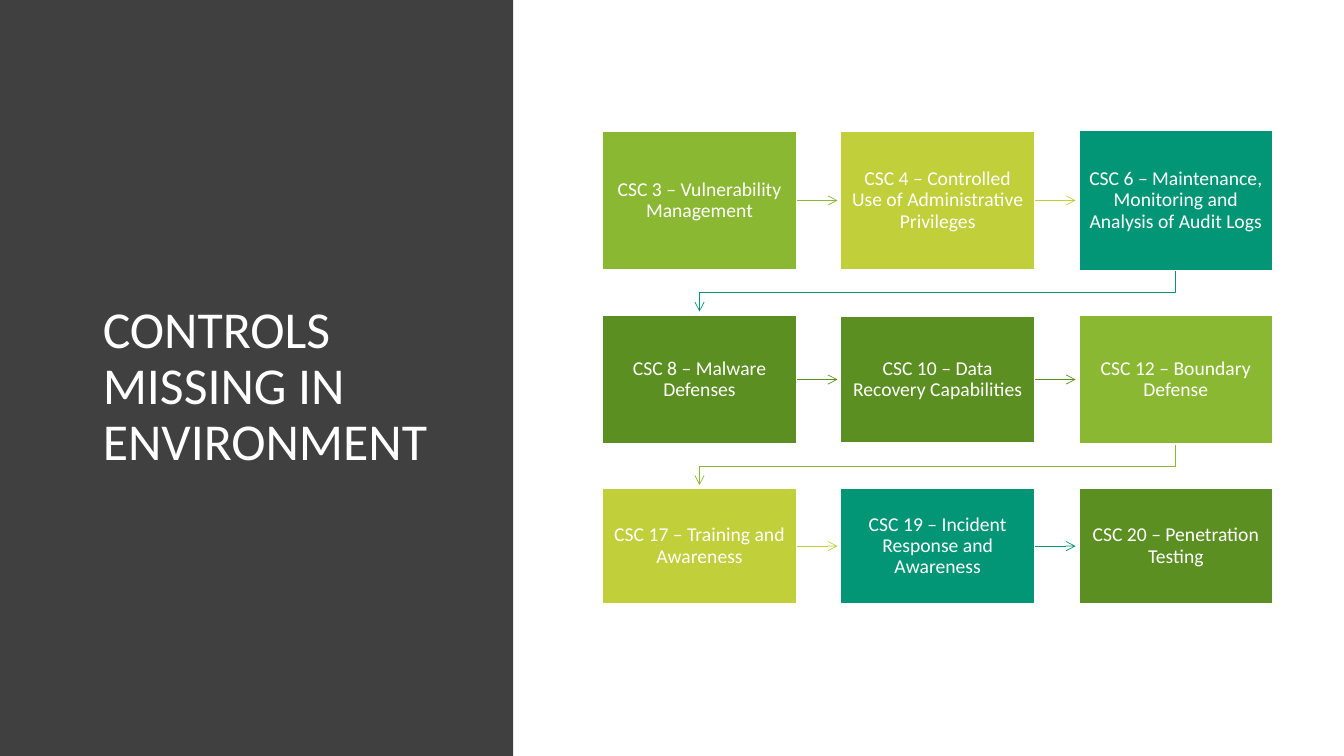
from dataclasses import dataclass

from lxml import etree
from pptx import Presentation
from pptx.dml.color import RGBColor
from pptx.enum.shapes import MSO_CONNECTOR, MSO_SHAPE
from pptx.enum.text import MSO_ANCHOR, PP_ALIGN
from pptx.oxml.ns import qn
from pptx.shapes.base import BaseShape
from pptx.slide import Slide
from pptx.util import Pt

RECT = MSO_SHAPE.RECTANGLE
STRAIGHT = MSO_CONNECTOR.STRAIGHT
MIDDLE = MSO_ANCHOR.MIDDLE
CENTER = PP_ALIGN.CENTER

FONT = "Calibri"
WHITE, DARK = "FFFFFF", "404040"
LIME, YELLOW, TEAL, GREEN = "8AB833", "C0CF3A", "029676", "5B8F22"

LEFT, STEP, WIDTH = 430.5, 170.1, 138.4
REACH = 29.3  # length of an arrow across the gap between boxes
BEND = 15.8  # drop before a row link turns left


@dataclass
class Box:
    text: str
    color: str
    height: float


@dataclass
class Row:
    mid: float
    boxes: list[Box]


ROWS = [
    Row(143.2, [
        Box("CSC 3 – Vulnerability Management", LIME, 98.6),
        Box("CSC 4 – Controlled Use of Administrative Privileges", YELLOW, 99.4),
        Box("CSC 6 – Maintenance, Monitoring and Analysis of Audit Logs", TEAL, 100.1),
    ]),
    Row(271.1, [
        Box("CSC 8 – Malware Defenses", GREEN, 92),
        Box("CSC 10 – Data Recovery Capabilities", GREEN, 91),
        Box("CSC 12 – Boundary Defense", LIME, 92),
    ]),
    Row(390.1, [
        Box("CSC 17 – Training and Awareness", YELLOW, 82.8),
        Box("CSC 19 – Incident Response and Awareness", TEAL, 82.8),
        Box("CSC 20 – Penetration Testing", GREEN, 82.8),
    ]),
]


def rgb(code: str) -> RGBColor:
    return RGBColor.from_string(code)


def write(shape: BaseShape, text: str, size: float) -> None:
    frame = shape.text_frame
    frame.word_wrap = True
    frame.vertical_anchor = MIDDLE
    line = frame.paragraphs[0]
    line.text = text
    line.line_spacing = 0.9
    line.font.name = FONT
    line.font.size = Pt(size)
    line.font.color.rgb = rgb(WHITE)


def add_rect(slide: Slide, x: float, y: float, w: float, h: float, color: str) -> BaseShape:
    rect = slide.shapes.add_shape(RECT, Pt(x), Pt(y), Pt(w), Pt(h))
    rect.shadow.inherit = False
    rect.fill.solid()
    rect.fill.fore_color.rgb = rgb(color)
    rect.line.fill.background()
    return rect


def add_box(slide: Slide, box: Box, x: float, mid: float) -> None:
    rect = add_rect(slide, x, mid - box.height / 2, WIDTH, box.height, box.color)
    rect.line.color.rgb = rgb(WHITE)
    rect.line.width = Pt(1)
    write(rect, box.text, 14)
    frame = rect.text_frame
    frame.paragraphs[0].alignment = CENTER
    frame.margin_left = frame.margin_right = Pt(6.8)
    frame.margin_top = frame.margin_bottom = Pt(7)


def style_arrow(shape: BaseShape, color: str) -> None:
    shape.line.color.rgb = rgb(color)
    shape.line.width = Pt(0.5)
    etree.SubElement(shape.line._get_or_add_ln(), qn("a:tailEnd"), type="arrow")


def add_arrow(slide: Slide, x: float, y: float, color: str) -> None:
    arrow = slide.shapes.add_connector(STRAIGHT, Pt(x), Pt(y), Pt(x + REACH), Pt(y))
    style_arrow(arrow, color)
    etree.SubElement(arrow._element.spPr, qn("a:effectLst"))


def add_link(slide: Slide, y: float, color: str) -> None:
    """Draw the bent arrow from the last box of a row to the next row."""
    start = LEFT + WIDTH / 2
    end = start + 2 * STEP
    points = [(end, y + BEND), (start, y + BEND), (start, y + REACH)]
    path = slide.shapes.build_freeform(Pt(end), Pt(y))
    path.add_line_segments([(Pt(px), Pt(py)) for px, py in points], close=False)
    link = path.convert_to_shape()
    link.shadow.inherit = False
    link.fill.background()
    style_arrow(link, color)


def main() -> None:
    deck = Presentation()
    deck.slide_width, deck.slide_height = Pt(960), Pt(540)
    slide = deck.slides.add_slide(deck.slide_layouts[6])

    add_rect(slide, 0, 0, 366.5, 540, DARK)
    title = slide.shapes.add_textbox(Pt(66.4), Pt(64), Pt(263), Pt(425.5))
    write(title, "CONTROLS MISSING IN ENVIRONMENT", 37)

    for row in ROWS:
        for col, box in enumerate(row.boxes):
            x = LEFT + col * STEP
            if box is not row.boxes[-1]:
                add_arrow(slide, x + WIDTH, row.mid, box.color)
            elif row is not ROWS[-1]:
                add_link(slide, row.mid + box.height / 2, box.color)
            add_box(slide, box, x, row.mid)

    deck.save("out.pptx")


if __name__ == "__main__":
    main()
